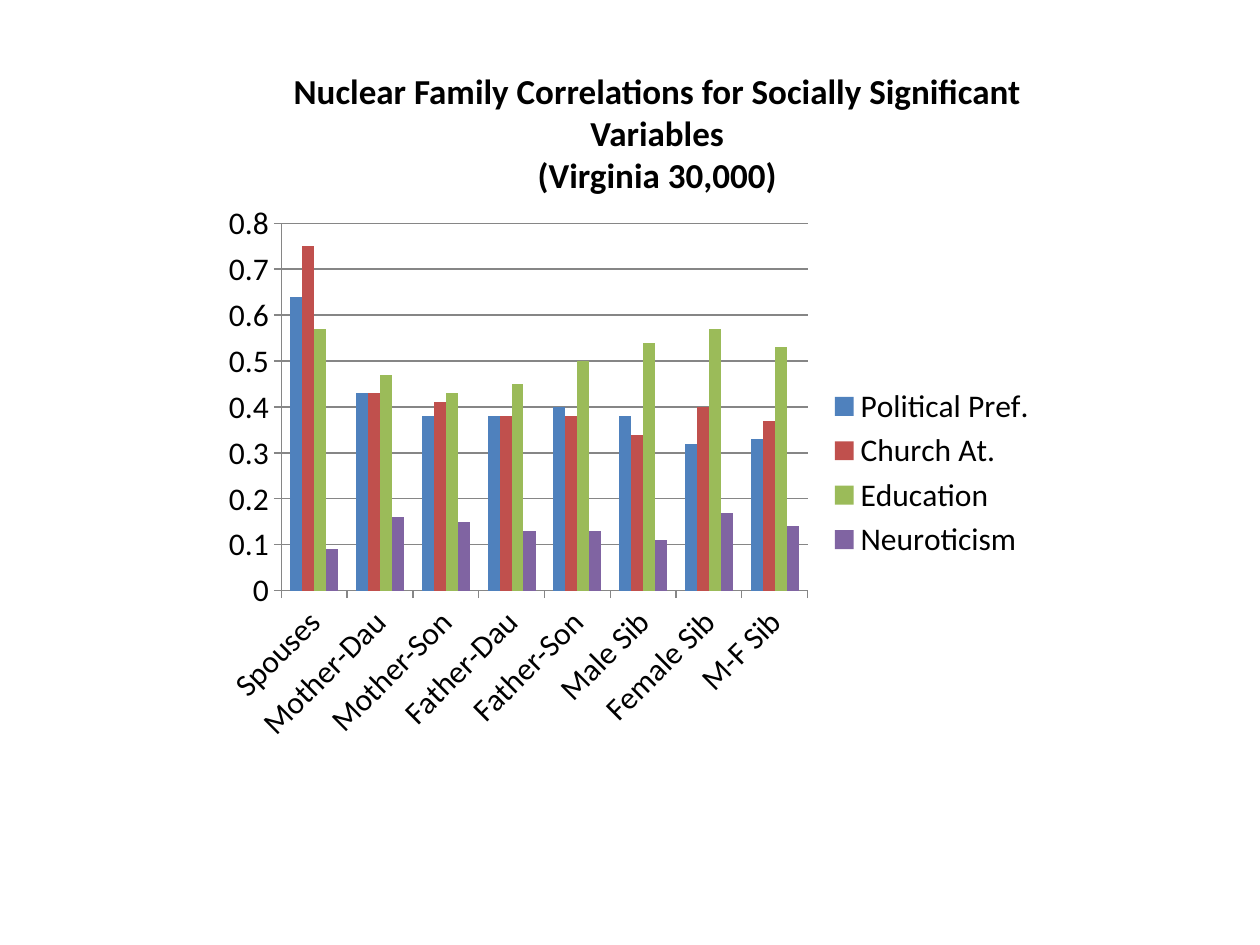
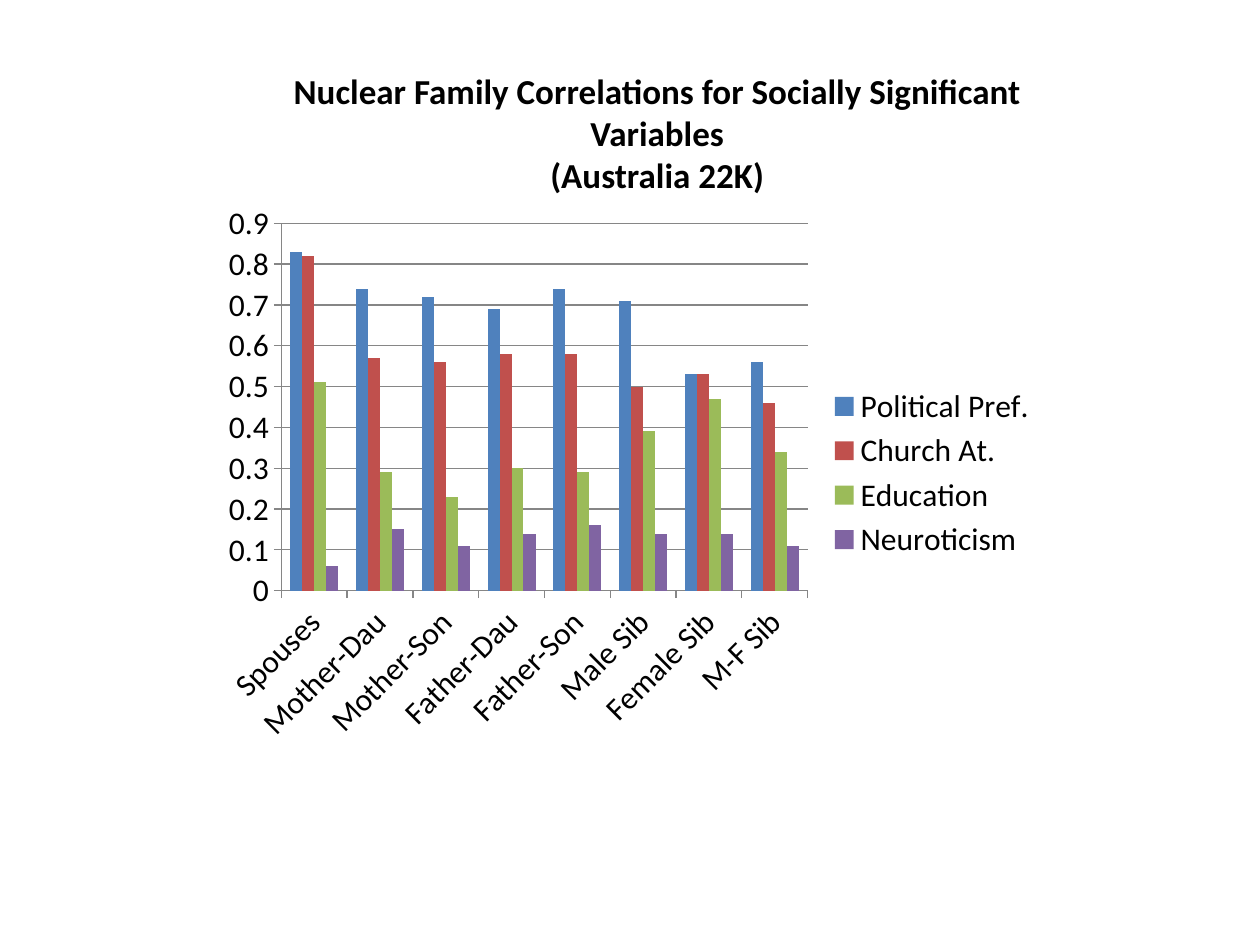
import dataclasses

import pptx
import pptx.chart.data
import pptx.dml.color
import pptx.enum.chart
import pptx.enum.text
import pptx.util

Cm = pptx.util.Cm

FONT = "Calibri"
BLACK = "000000"
AXIS_GREY = "868686"
TITLE_SIZE = 20
CHART_SIZE = 18
TITLE_ONLY_LAYOUT = 5
HEADING = "Nuclear Family Correlations for Socially Significant Variables"
RELATIONSHIPS = [
    "Spouses", "Mother-Dau", "Mother-Son", "Father-Dau",
    "Father-Son", "Male Sib", "Female Sib", "M-F Sib",
]
TRAIT_COLOURS = {
    "Political Pref.": "4F81BD",
    "Church At.": "C0504D",
    "Education": "9BBB59",
    "Neuroticism": "8064A2",
}


@dataclasses.dataclass(frozen=True)
class Study:
    sample: str
    axis_top: float
    correlations: list[list[float]]


STUDIES = [
    Study("(Virginia 30,000)", 0.8, [
        [0.64, 0.43, 0.38, 0.38, 0.4, 0.38, 0.32, 0.33],
        [0.75, 0.43, 0.41, 0.38, 0.38, 0.34, 0.4, 0.37],
        [0.57, 0.47, 0.43, 0.45, 0.5, 0.54, 0.57, 0.53],
        [0.09, 0.16, 0.15, 0.13, 0.13, 0.11, 0.17, 0.14],
    ]),
    Study("(Australia 22K)", 0.9, [
        [0.83, 0.74, 0.72, 0.69, 0.74, 0.71, 0.53, 0.56],
        [0.82, 0.57, 0.56, 0.58, 0.58, 0.5, 0.53, 0.46],
        [0.51, 0.29, 0.23, 0.3, 0.29, 0.39, 0.47, 0.34],
        [0.06, 0.15, 0.11, 0.14, 0.16, 0.14, 0.14, 0.11],
    ]),
]


def colour(value: str) -> pptx.dml.color.RGBColor:
    return pptx.dml.color.RGBColor.from_string(value)


def style_font(font, size: float, bold: bool = False) -> None:
    font.name = FONT
    font.size = pptx.util.Pt(size)
    font.bold = bold
    font.color.rgb = colour(BLACK)


def style_line(line) -> None:
    line.color.rgb = colour(AXIS_GREY)
    line.width = pptx.util.Pt(0.75)


def add_title(page, sample: str) -> None:
    title = page.shapes.title
    title.left, title.top = Cm(4.3), Cm(1.27)
    title.width, title.height = Cm(17.9), Cm(1.96)
    frame = title.text_frame
    frame.text = f"{HEADING}\n{sample}"
    frame.word_wrap = True
    frame.auto_size = pptx.enum.text.MSO_AUTO_SIZE.SHAPE_TO_FIT_TEXT
    frame.vertical_anchor = pptx.enum.text.MSO_ANCHOR.TOP
    for para in frame.paragraphs:
        para.alignment = pptx.enum.text.PP_ALIGN.CENTER
        para.line_spacing = 1.0
        para.space_before = pptx.util.Pt(0)
        for span in para.runs:
            style_font(span.font, TITLE_SIZE, bold=True)


def style_axes(chart, axis_top: float) -> None:
    category_axis, value_axis = chart.category_axis, chart.value_axis
    for axis in (category_axis, value_axis):
        axis.major_tick_mark = pptx.enum.chart.XL_TICK_MARK.OUTSIDE
        axis.minor_tick_mark = pptx.enum.chart.XL_TICK_MARK.NONE
        style_line(axis.format.line)
        style_font(axis.tick_labels.font, CHART_SIZE)
    category_axis.has_major_gridlines = False
    category_axis._element.txPr.bodyPr.set("rot", "-2700000")
    value_axis.has_major_gridlines = True
    style_line(value_axis.major_gridlines.format.line)
    value_axis.minimum_scale = 0
    value_axis.maximum_scale = axis_top
    value_axis.major_unit = 0.1


def add_correlation_chart(page, study: Study) -> None:
    data = pptx.chart.data.CategoryChartData()
    data.categories = RELATIONSHIPS
    for trait, values in zip(TRAIT_COLOURS, study.correlations):
        data.add_series(trait, values)
    chart = page.shapes.add_chart(
        pptx.enum.chart.XL_CHART_TYPE.COLUMN_CLUSTERED,
        Cm(4.23), Cm(3.89), Cm(16.93), Cm(11.29), data,
    ).chart
    style_font(chart.font, CHART_SIZE)
    chart.has_title = False
    chart.has_legend = True
    chart.legend.position = pptx.enum.chart.XL_LEGEND_POSITION.RIGHT
    chart.legend.include_in_layout = False
    style_font(chart.legend.font, CHART_SIZE)
    style_axes(chart, study.axis_top)
    plot = chart.plots[0]
    plot.gap_width = 150
    plot.vary_by_categories = False
    for series, fill_colour in zip(plot.series, TRAIT_COLOURS.values()):
        series.format.fill.solid()
        series.format.fill.fore_color.rgb = colour(fill_colour)


def main() -> None:
    deck = pptx.Presentation()
    deck.slide_width, deck.slide_height = Cm(25.4), Cm(19.05)
    for study in STUDIES:
        page = deck.slides.add_slide(deck.slide_layouts[TITLE_ONLY_LAYOUT])
        add_correlation_chart(page, study)
        add_title(page, study.sample)
    deck.save("out.pptx")


if __name__ == "__main__":
    main()
